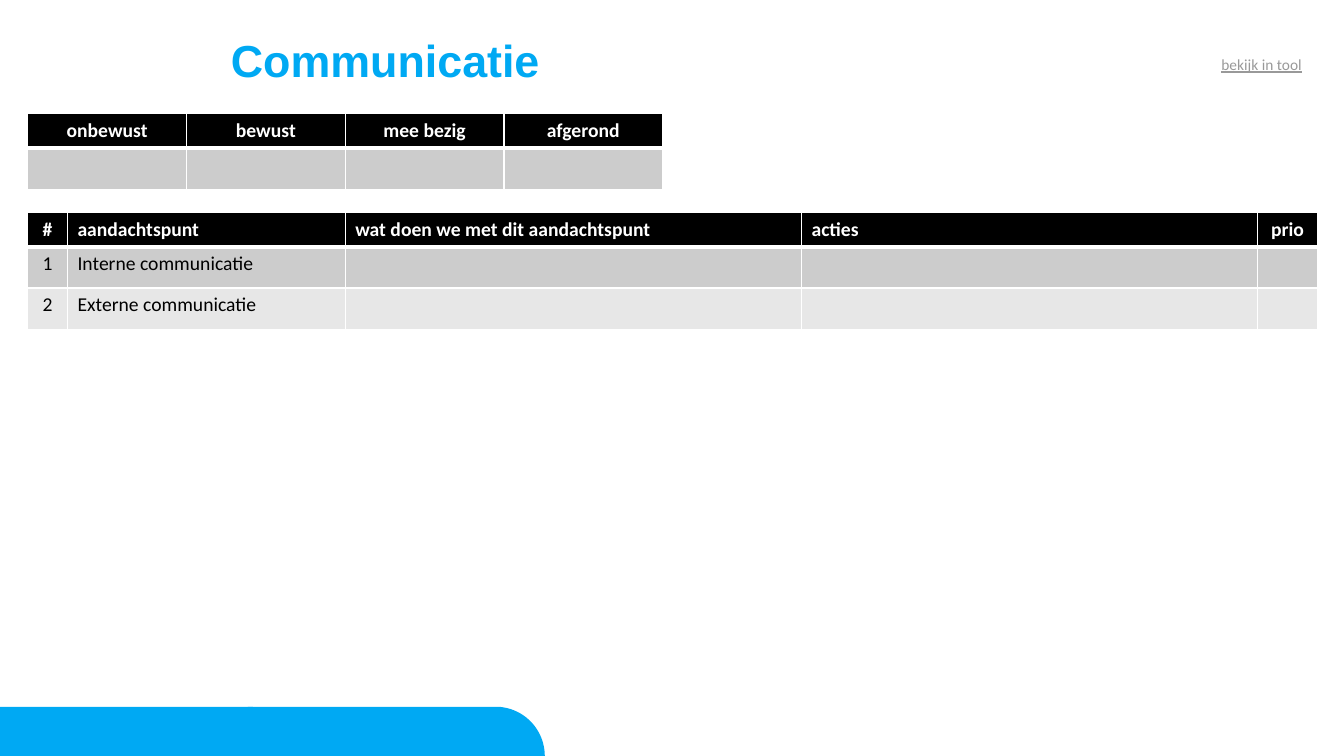
import math
from dataclasses import dataclass

import lxml.etree
import pptx
import pptx.dml.color
import pptx.enum.text
import pptx.oxml.ns
import pptx.util

Cm, Pt = pptx.util.Cm, pptx.util.Pt
Align = pptx.enum.text.PP_ALIGN
HUES = {
    "blue": "00A9F3",
    "black": "000000",
    "white": "FFFFFF",
    "link": "999999",
    "dark": "CCCCCC",
    "light": "E7E7E7",
}
TALL, WIDE = 19.05, 33.87
LEFT = 0.7


@dataclass
class Grid:
    top: float
    cols: list[float]
    rows: list[list[str]]
    mid: set[int]  # centred columns


@dataclass
class Label:
    text: str
    box: tuple[float, float, float, float]
    font: str
    size: int
    hue: str
    inset: float
    bold: bool = False
    under: bool = False


GRIDS = [
    Grid(
        5.36,
        [1, 7, 11.5, 11.5, 1.5],
        [
            ["#", "aandachtspunt", "wat doen we met dit aandachtspunt", "acties", "prio"],
            ["1", "Interne communicatie", "", "", ""],
            ["2", "Externe communicatie", "", "", ""],
        ],
        {0, 4},
    ),
    Grid(
        2.87,
        [4] * 4,
        [["onbewust", "bewust", "mee bezig", "afgerond"], [""] * 4],
        {0, 1, 2, 3},
    ),
]
LABELS = [
    Label("Communicatie", (5.82, 0.86, 8.48, 1.45), "Arial", 32, "blue", 0, bold=True),
    Label("bekijk in tool", (30.53, 1.25, 2.64, 0.73), "Calibri", 11, "link", 0.25, under=True),
]


def tint(name: str) -> pptx.dml.color.RGBColor:
    return pptx.dml.color.RGBColor.from_string(HUES[name])


def style(font, name: str, size: int, hue: str, bold: bool) -> None:
    font.name, font.size, font.bold = name, Pt(size), bold
    font.color.rgb = tint(hue)


def edge(cell, sides: dict[str, int]) -> None:
    """Draw white cell borders, with widths in points, ahead of the fill."""
    qn = pptx.oxml.ns.qn
    props = cell._tc.get_or_add_tcPr()
    for spot, (side, width) in enumerate(sides.items()):
        line = lxml.etree.Element(qn(f"a:ln{side}"), w=str(Pt(width)))
        fill = lxml.etree.SubElement(line, qn("a:solidFill"))
        lxml.etree.SubElement(fill, qn("a:srgbClr"), val=HUES["white"])
        props.insert(spot, line)


def add_grid(slide, grid: Grid) -> None:
    highs = [0.82] + [1.04] * (len(grid.rows) - 1)
    frame = slide.shapes.add_table(
        len(highs), len(grid.cols), Cm(LEFT), Cm(grid.top), Cm(sum(grid.cols)), Cm(sum(highs))
    )
    table = frame.table
    for col, width in zip(table.columns, grid.cols):
        col.width = Cm(width)
    for r, (row, high) in enumerate(zip(grid.rows, highs)):
        table.rows[r].height = Cm(high)
        head = r == 0
        back = "black" if head else ("light", "dark")[r % 2]
        sides = {"L": 1, "R": 1, "T": 3 if r == 1 else 1, "B": 3 if head else 1}
        for c, text in enumerate(row):
            cell = table.cell(r, c)
            cell.text = text
            cell.fill.solid()
            cell.fill.fore_color.rgb = tint(back)
            edge(cell, sides)
            para = cell.text_frame.paragraphs[0]
            para.alignment = Align.CENTER if c in grid.mid else Align.LEFT
            style(para.font, "Calibri", 14, "white" if head else "black", head)


def add_label(slide, label: Label) -> None:
    frame = slide.shapes.add_textbox(*map(Cm, label.box)).text_frame
    frame.margin_left = frame.margin_right = Cm(label.inset)
    frame.margin_top = frame.margin_bottom = Cm(label.inset / 2)
    frame.vertical_anchor = pptx.enum.text.MSO_ANCHOR.MIDDLE
    frame.word_wrap = False
    para = frame.paragraphs[0]
    para.text = label.text
    para.line_spacing = 0.9 if label.bold else 1.0
    style(para.font, label.font, label.size, label.hue, label.bold)
    para.font.underline = label.under


def add_tab(slide, left: float) -> None:
    """Draw a footer tab whose top right corner is a quarter circle."""
    width, high, steps = 7.48, 1.24, 30
    mid = left + width - high
    turns = [math.pi / 2 * (1 - n / steps) for n in range(steps + 1)]
    arc = [(mid + high * math.cos(a), TALL - high * math.sin(a)) for a in turns]
    path = slide.shapes.build_freeform(Cm(left), Cm(TALL))
    path.add_line_segments([(Cm(x), Cm(y)) for x, y in [(left, TALL - high), *arc]])
    tab = path.convert_to_shape()
    tab.shadow.inherit = False
    tab.fill.solid()
    tab.fill.fore_color.rgb = tint("blue")
    tab.line.fill.background()


def main() -> None:
    deck = pptx.Presentation()
    deck.slide_width, deck.slide_height = Cm(WIDE), Cm(TALL)
    slide = deck.slides.add_slide(deck.slide_layouts[6])
    for left in (0, 6.25):
        add_tab(slide, left)
    for grid in GRIDS:
        add_grid(slide, grid)
    for label in LABELS:
        add_label(slide, label)
    deck.save("out.pptx")


if __name__ == "__main__":
    main()
